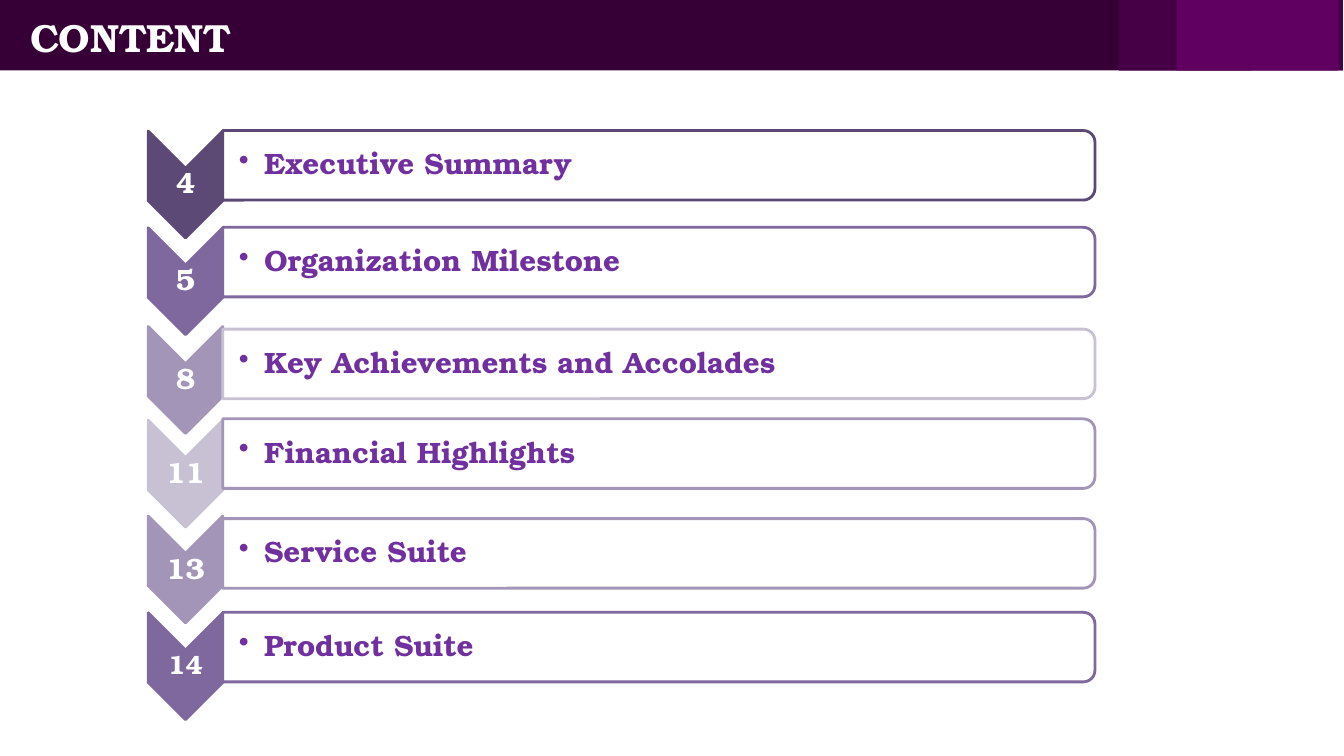
from lxml import etree
from pptx import Presentation
from pptx.dml.color import RGBColor
from pptx.enum.shapes import MSO_SHAPE as SHAPE
from pptx.enum.text import MSO_ANCHOR, PP_ALIGN
from pptx.oxml.ns import qn
from pptx.util import Inches, Pt

# Content
TITLE = "CONTENT"
# page, size of page number, chevron colour, chevron centre y, topic, bar colour, bar centre y
ROWS = [
    ("4", 21, "5D4976", 1.83, "Executive Summary", "5D4976", 1.64),
    ("5", 21, "7F689E", 2.79, "Organization Milestone", "7F689E", 2.6),
    ("8", 21, "A395B8", 3.77, "Key Achievements and Accolades", "C8C0D3", 3.61),
    ("11", 21, "C8C0D3", 4.7, "Financial Highlights", "A395B8", 4.5),
    ("13", 21, "A395B8", 5.65, "Service Suite", "A395B8", 5.49),
    ("14", 19, "7F689E", 6.61, "Product Suite", "7F689E", 6.42),
]
# left, width, colour, opacity in percent
ACCENTS = [(11.1, 2.22, "480048", 94), (11.67, 1.6, "640064", 87)]
BAND = (-0.02, 12.43, "360036", 100)

# Layout
FONT = "TeX Gyre Bonum"
HEADER_H = 0.7
CHEVRON_X, CHEVRON_LEN, CHEVRON_W = 1.84, 1.06, 0.74
BAR_LEFT, BAR_LEN, BAR_H = 2.21, 8.65, 0.69
TOPIC_LEFT, TOPIC_W, LABEL_H = 2.36, 8.46, 0.36

prs = Presentation()
prs.slide_width, prs.slide_height = Inches(13.33), Inches(7.5)
s = prs.slides.add_slide(prs.slide_layouts[6])


def rgb(value):
    return RGBColor.from_string(value)


def add_block(kind, x, y, w, h, fill, opacity=100, line=None, rotation=0):
    sp = s.shapes.add_shape(kind, Inches(x), Inches(y), Inches(w), Inches(h))
    sp.shadow.inherit = False
    sp.rotation = rotation
    sp.fill.solid()
    sp.fill.fore_color.rgb = rgb(fill)
    if opacity < 100:
        color = sp.fill._xPr.find(".//" + qn("a:srgbClr"))
        etree.SubElement(color, qn("a:alpha"), val=str(opacity * 1000))
    if line:
        sp.line.color.rgb = rgb(line)
        sp.line.width = Pt(2)
    else:
        sp.line.fill.background()
    return sp


def add_turned(kind, cx, cy, length, thickness, turned_w, turned_h, **style):
    """Place a shape by its centre and turn it a quarter clockwise."""
    return add_block(kind, cx - turned_w / 2, cy - turned_h / 2,
                     turned_w, turned_h, rotation=90, **style)


def add_text(text, x, y, w, h, size, color, inset=0.01, align=PP_ALIGN.LEFT,
             spacing=0.9, bullet=False):
    tf = s.shapes.add_textbox(Inches(x), Inches(y), Inches(w), Inches(h)).text_frame
    tf.word_wrap = True
    tf.vertical_anchor = MSO_ANCHOR.MIDDLE
    tf.margin_left = tf.margin_right = tf.margin_top = tf.margin_bottom = Inches(inset)
    tf.text = text
    p = tf.paragraphs[0]
    p.alignment = align
    p.line_spacing = spacing
    if bullet:
        pPr = p._p.get_or_add_pPr()
        pPr.set("marL", str(Inches(0.25)))
        pPr.set("indent", str(Inches(-0.25)))
        etree.SubElement(pPr, qn("a:buChar"), char="•")
    font = p.runs[0].font
    font.name, font.size, font.bold = FONT, Pt(size), True
    font.color.rgb = rgb(color)


# Header: the accents lie both under and over the band
for left, width, color, opacity in ACCENTS + [BAND] + ACCENTS:
    add_block(SHAPE.RECTANGLE, left, 0, width, HEADER_H, color, opacity)
add_text(TITLE, 0.25, 0.07, 8.78, 0.6, 28, "FFFFFF", inset=0.05, spacing=1.0)

# Rows: chevron with page number, bar with topic
for page, size, chevron_color, chevron_y, topic, bar_color, bar_y in ROWS:
    chevron = add_turned(SHAPE.CHEVRON, CHEVRON_X, chevron_y, CHEVRON_LEN, CHEVRON_W,
                         CHEVRON_LEN, CHEVRON_W, fill=chevron_color, line=chevron_color)
    chevron.adjustments[0] = 0.5
    add_text(page, CHEVRON_X - CHEVRON_W / 2, chevron_y - LABEL_H / 2, CHEVRON_W, LABEL_H,
             size, "FFFFFF", align=PP_ALIGN.CENTER)
    add_turned(SHAPE.ROUND_2_SAME_RECTANGLE, BAR_LEFT + BAR_LEN / 2, bar_y, BAR_LEN, BAR_H,
               BAR_H, BAR_LEN, fill="FFFFFF", opacity=90, line=bar_color)
    add_text(topic, TOPIC_LEFT, bar_y - LABEL_H / 2, TOPIC_W, LABEL_H, 21, "7030A0",
             bullet=True)

prs.save("out.pptx")
